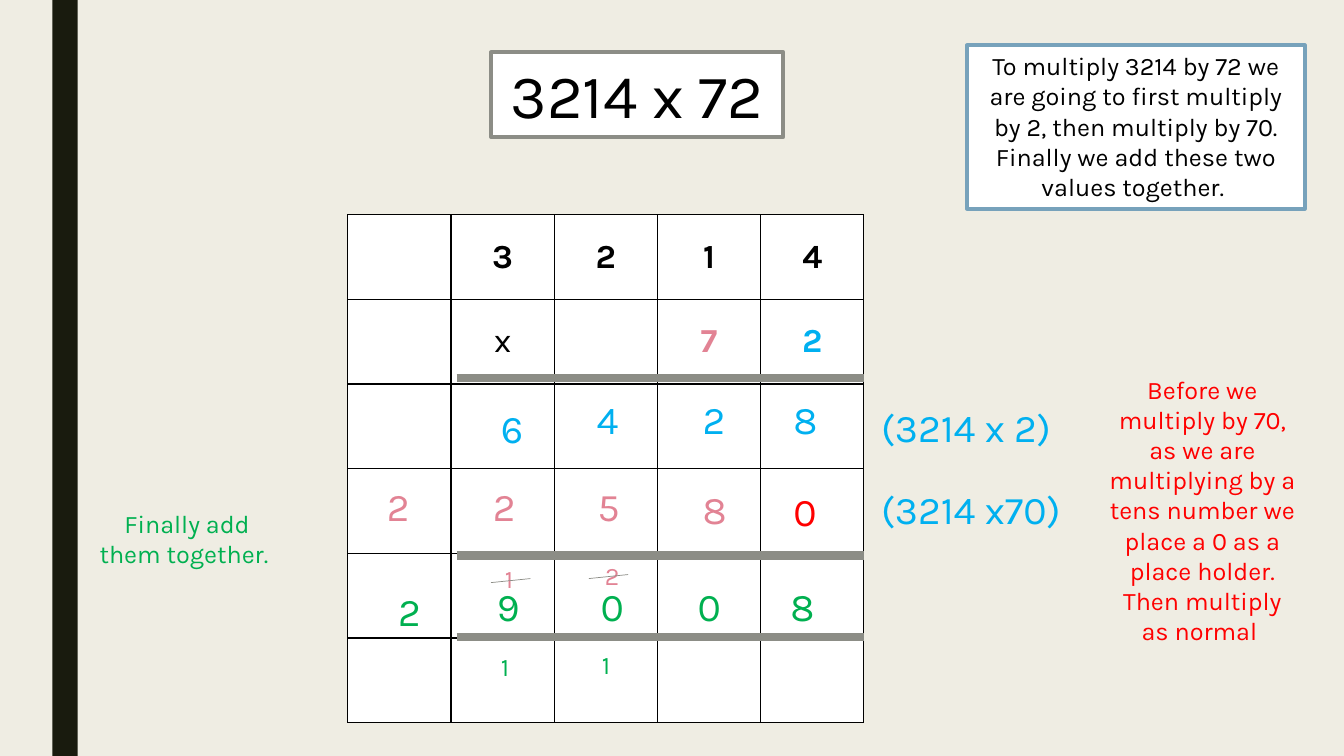
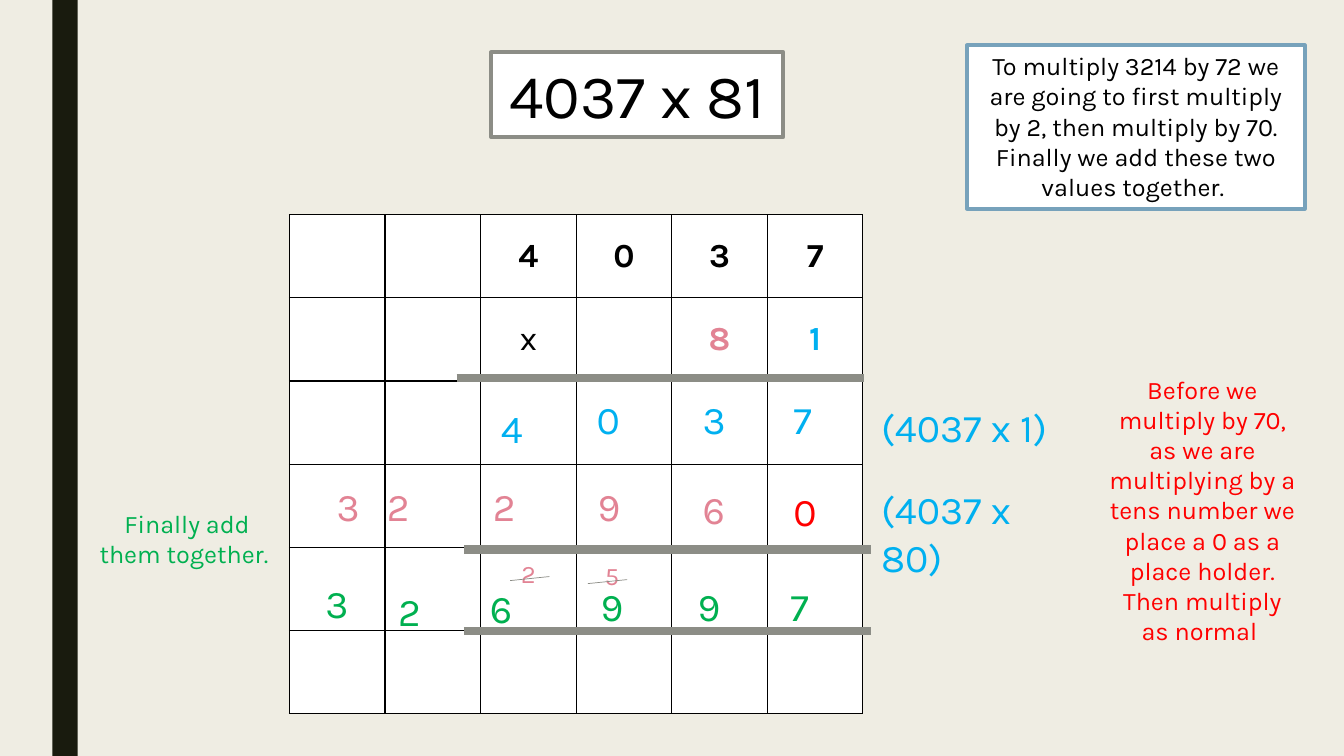
from lxml import etree
from pptx import Presentation
from pptx.dml.color import RGBColor
from pptx.enum.shapes import MSO_CONNECTOR, MSO_SHAPE
from pptx.enum.text import MSO_ANCHOR, MSO_AUTO_SIZE, PP_ALIGN
from pptx.oxml import parse_xml
from pptx.oxml.ns import nsdecls, qn
from pptx.util import Inches, Pt

FONT = "Karla"
PAPER, BAND, WHITE, BLACK = "EFEDE3", "191B0E", "FFFFFF", "000000"
GREY, STEEL = "8C8D86", "77A2BB"
BLUE, PINK, RED, GREEN = "00B0F0", "E28394", "FF0000", "00B050"

METHOD = ("To multiply 3214 by 72 we are going to first multiply by 2, then "
          "multiply by 70. Finally we add these two values together. ")
PLACE_HOLDER = ("Before we multiply by 70, as we are multiplying by a tens number "
                "we place a 0 as a place holder.", "Then multiply as normal ")
ADDITION = "Finally add them together. "

# Places (left, top) of the written digits, shared by both sums
BY_ONES = [(4.87, 3.96), (5.82, 3.87), (6.87, 3.87), (7.77, 3.87)]
BY_TENS = [(3.74, 4.74), (4.79, 4.74), (5.83, 4.74), (6.87, 4.77)]
ZERO = [(7.77, 4.79)]
TOTAL_END = [(5.86, 5.73), (6.82, 5.73), (7.74, 5.73)]


def rgb(code):
    return RGBColor.from_string(code)


class Lesson:
    def __init__(self):
        self.prs = Presentation()
        self.prs.slide_width, self.prs.slide_height = Inches(13.33), Inches(7.5)
        background = self.prs.slide_master.background.fill
        background.solid()
        background.fore_color.rgb = rgb(PAPER)
        self.slide = None

    def new_slide(self):
        self.slide = self.prs.slides.add_slide(self.prs.slide_layouts[6])
        self.rectangle(0.52, 0, 0.25, 7.5, BAND)

    def rectangle(self, left, top, width, height, fill, line=None):
        shape = self.slide.shapes.add_shape(
            MSO_SHAPE.RECTANGLE, Inches(left), Inches(top), Inches(width), Inches(height))
        shape.shadow.inherit = False
        shape.fill.solid()
        shape.fill.fore_color.rgb = rgb(fill)
        if line:
            shape.line.color.rgb = rgb(line)
            shape.line.width = Pt(2.75)
        else:
            shape.line.fill.background()
        return shape

    def add_run(self, paragraph, text, size, color, bold=False):
        run = paragraph.add_run()
        run.text = text
        run.font.name, run.font.size, run.font.bold = FONT, Pt(size), bold
        run.font.color.rgb = rgb(color)

    def set_text(self, shape, texts, size, color, align, wrap):
        """Fill a shape with one paragraph for each text."""
        frame = shape.text_frame
        frame.word_wrap = wrap
        frame.auto_size = MSO_AUTO_SIZE.SHAPE_TO_FIT_TEXT
        frame.vertical_anchor = MSO_ANCHOR.TOP
        for index, text in enumerate(texts):
            paragraph = frame.add_paragraph() if index else frame.paragraphs[0]
            paragraph.alignment = align
            self.add_run(paragraph, text, size, color)

    def panel(self, place, text, size, line, wrap):
        self.set_text(self.rectangle(*place, WHITE, line), [text], size, BLACK,
                      PP_ALIGN.CENTER, wrap)

    def label(self, left, top, width, height, texts, size, color,
              align=PP_ALIGN.LEFT, wrap=False):
        box = self.slide.shapes.add_textbox(
            Inches(left), Inches(top), Inches(width), Inches(height))
        self.set_text(box, texts, size, color, align, wrap)

    def note(self, left, top, height, texts, color):
        self.label(left, top, 2.05, height, texts, 18, color, PP_ALIGN.CENTER, True)

    def digits(self, number, places, color):
        for digit, (left, top) in zip(number, places, strict=True):
            self.label(left, top, 0.43, 0.57, [digit], 28, color)

    def carries(self, number, places, color):
        for digit, (left, top) in zip(number, places, strict=True):
            self.label(left, top, 0.35, 0.4, [digit], 18, color)

    def line(self, x1, y1, x2, y2, width):
        line = self.slide.shapes.add_connector(
            MSO_CONNECTOR.STRAIGHT, Inches(x1), Inches(y1), Inches(x2), Inches(y2))
        line.line.color.rgb = rgb(GREY)
        line.line.width = Pt(width)
        etree.SubElement(line._element.spPr, qn("a:effectLst"))

    def rule(self, left, top):
        self.line(left, top, left + 4.04, top, 6)

    def strike(self, left, top):
        """Cross out a carried digit."""
        self.line(left, top, left + 0.39, top - 0.04, 0.5)

    def grid(self, left, width, height, columns, multiplicand, multiplier):
        """Draw six rows of squares with the sum set out in the first two."""
        rows = 6
        table = self.slide.shapes.add_table(
            rows, columns, Inches(left), Inches(2.13), Inches(width), Inches(height)).table
        table.first_row = table.horz_banding = False
        for row in table.rows:
            row.height = Inches(height / rows)
        for column in table.columns:
            column.width = Inches(width / columns)
        for cell in table.iter_cells():
            self.frame_cell(cell)
        tens, ones = multiplier
        top_row = [(digit, BLACK, True) for digit in multiplicand]
        second_row = [("x", BLACK, False), None, (tens, PINK, True), (ones, BLUE, True)]
        for row, entries in enumerate((top_row, second_row)):
            for column, entry in enumerate(entries, columns - len(entries)):
                if entry:
                    text, color, bold = entry
                    cell = table.cell(row, column)
                    cell.vertical_anchor = MSO_ANCHOR.MIDDLE
                    paragraph = cell.text_frame.paragraphs[0]
                    paragraph.alignment = PP_ALIGN.CENTER
                    self.add_run(paragraph, text, 24, color, bold)

    def frame_cell(self, cell):
        properties = cell._tc.get_or_add_tcPr()
        for side in ("lnL", "lnR", "lnT", "lnB"):
            properties.append(parse_xml(
                f'<a:{side} {nsdecls("a")} w="12700"><a:solidFill>'
                f'<a:srgbClr val="{BLACK}"/></a:solidFill></a:{side}>'))
        cell.fill.solid()
        cell.fill.fore_color.rgb = rgb(WHITE)

    def sum_slide(self, multiplicand, multiplier, grid, rules):
        """Start a slide with everything that both sums share."""
        self.new_slide()
        self.panel((4.87, 0.52, 2.9, 0.84), f"{multiplicand} x {multiplier}", 44, GREY, False)
        self.grid(*grid, multiplicand, multiplier)
        for left, top in rules:
            self.rule(left, top)
        self.panel((9.59, 0.45, 3.35, 1.62), METHOD, 18, STEEL, True)
        self.note(10.9, 3.66, 2.83, PLACE_HOLDER, RED)
        self.note(0.83, 4.99, 0.71, [ADDITION], GREEN)
        self.label(8.64, 3.95, 1.92, 0.57, [f"({multiplicand} x {multiplier[1]})"], 28, BLUE)
        self.digits("0", ZERO, RED)


def main():
    lesson = Lesson()

    lesson.sum_slide("3214", "72", (3.45, 5.12, 5.04, 5),
                     [(4.53, 3.75), (4.53, 5.51), (4.53, 6.32)])
    lesson.digits("6428", BY_ONES, BLUE)
    lesson.digits("2258", BY_TENS, PINK)
    lesson.digits("29008", [(3.85, 5.78), (4.83, 5.73), *TOTAL_END], GREEN)
    lesson.carries("12", [(4.91, 5.54), (5.9, 5.51)], PINK)
    lesson.carries("11", [(4.87, 6.41), (5.87, 6.39)], GREEN)
    lesson.strike(4.87, 5.78)
    lesson.strike(5.84, 5.74)
    lesson.label(8.64, 4.77, 2.05, 0.57, ["(3214 x70)"], 28, BLUE)

    lesson.sum_slide("4037", "81", (2.87, 5.69, 4.95, 6),
                     [(4.53, 3.75), (4.6, 5.45), (4.6, 6.26)])
    lesson.digits("4037", BY_ONES, BLUE)
    lesson.digits("32296", [(3.24, 4.74), *BY_TENS], PINK)
    lesson.digits("326997", [(3.13, 5.7), (3.85, 5.78), (4.76, 5.75), *TOTAL_END], GREEN)
    lesson.carries("25", [(5.07, 5.49), (5.9, 5.51)], PINK)
    lesson.strike(5.06, 5.76)
    lesson.strike(5.83, 5.79)
    lesson.label(8.64, 4.77, 2, 0.57, ["(4037 x 80)"], 28, BLUE, wrap=True)

    lesson.prs.save("out.pptx")


if __name__ == "__main__":
    main()
